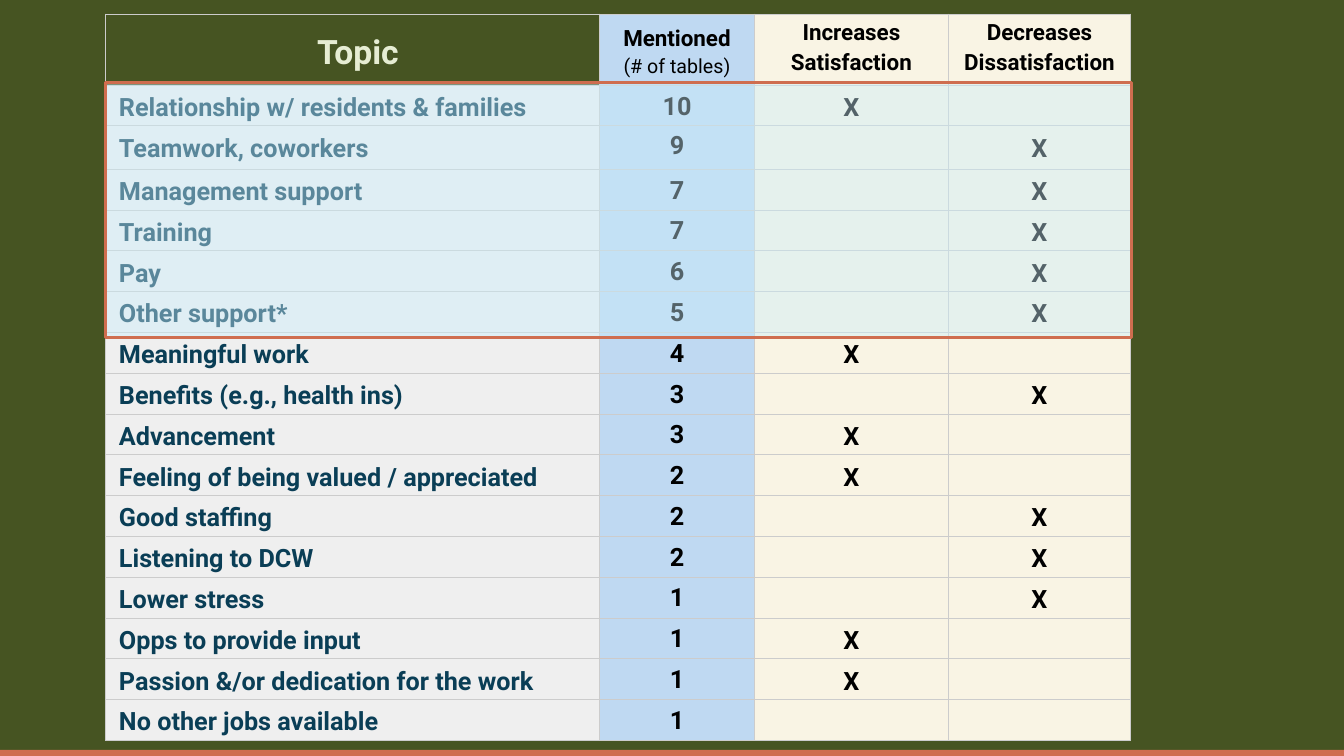
from lxml import etree
from pptx import Presentation
from pptx.dml.color import RGBColor
from pptx.enum.shapes import MSO_SHAPE
from pptx.enum.text import MSO_ANCHOR, PP_ALIGN
from pptx.oxml.ns import qn
from pptx.util import Inches, Pt

RECTANGLE = MSO_SHAPE.RECTANGLE
TOP, MIDDLE = MSO_ANCHOR.TOP, MSO_ANCHOR.MIDDLE
LEFT, CENTER = PP_ALIGN.LEFT, PP_ALIGN.CENTER

COLORS = {
    "background": "465422",
    "accent": "CF6D4F",
    "heading": "E6EDD3",
    "topic_text": "0A3E56",
    "black": "000000",
    "topic_fill": "EFEFEF",
    "count_fill": "BFD9F2",
    "effect_fill": "F9F4E4",
    "highlight": "CAEEFB",
    "border": "CCCCCC",
}

TABLE_LEFT, TABLE_TOP, TABLE_WIDTH, TABLE_HEIGHT = 1.05, 0.14, 10.17, 7.21
COLUMN_WIDTHS = [4.9, 1.53, 1.93, 1.8]
FIRST_HEIGHTS = [0.71, 0.39, 0.44]

HEADERS = [
    ([("Topic", 24, True)], "heading", None, MIDDLE),
    ([("Mentioned", 16, True), ("(# of tables)", 14, False)], "black", "count_fill", MIDDLE),
    ([("Increases Satisfaction", 16, True)], "black", "effect_fill", TOP),
    ([("Decreases Dissatisfaction", 16, True)], "black", "effect_fill", TOP),
]

TOPICS = [
    ("Relationship w/ residents & families", 10, "X", ""),
    ("Teamwork, coworkers", 9, "", "X"),
    ("Management support", 7, "", "X"),
    ("Training", 7, "", "X"),
    ("Pay", 6, "", "X"),
    ("Other support*", 5, "", "X"),
    ("Meaningful work", 4, "X", ""),
    ("Benefits (e.g., health ins)", 3, "", "X"),
    ("Advancement", 3, "X", ""),
    ("Feeling of being valued / appreciated", 2, "X", ""),
    ("Good staffing", 2, "", "X"),
    ("Listening to DCW", 2, "", "X"),
    ("Lower stress", 1, "", "X"),
    ("Opps to provide input", 1, "X", ""),
    ("Passion &/or dedication for the work", 1, "X", ""),
    ("No other jobs available", 1, "", ""),
]

TOPIC_COLUMNS = [
    ("topic_text", "topic_fill", MIDDLE, LEFT),
    ("black", "count_fill", TOP, CENTER),
    ("black", "effect_fill", MIDDLE, CENTER),
    ("black", "effect_fill", MIDDLE, CENTER),
]


def rgb(name):
    return RGBColor.from_string(COLORS[name])


def apply_format(target, values):
    for name, value in values.items():
        setattr(target, name, value)


class SlideBuilder:
    font = "Roboto"
    line_spacing = 1.15

    def __init__(self, page):
        self.page = page

    def background(self, color):
        fill = self.page.background.fill
        fill.solid()
        fill.fore_color.rgb = rgb(color)

    def rectangle(self, left, top, width, height, fill, line=None, line_width=0, opacity=100):
        box = self.page.shapes.add_shape(
            RECTANGLE, Inches(left), Inches(top), Inches(width), Inches(height))
        box.shadow.inherit = False
        box.fill.solid()
        box.fill.fore_color.rgb = rgb(fill)
        if opacity < 100:
            color = box.fill._xPr.find(qn("a:solidFill"))[0]
            etree.SubElement(color, qn("a:alpha"), val=str(opacity * 1000))
        if line:
            box.line.color.rgb = rgb(line)
            box.line.width = Pt(line_width)
        else:
            box.line.fill.background()

    def table(self, left, top, column_widths, row_heights):
        frame = self.page.shapes.add_table(
            len(row_heights), len(column_widths), Inches(left), Inches(top),
            Inches(sum(column_widths)), Inches(sum(row_heights)))
        table = frame.table
        apply_format(table, {"first_row": False, "horz_banding": False})
        for column, width in zip(table.columns, column_widths):
            column.width = Inches(width)
        for row, height in zip(table.rows, row_heights):
            row.height = Inches(height)
        return table

    def cell_borders(self, cell):
        properties = cell._tc.get_or_add_tcPr()
        for side in ("a:lnL", "a:lnR", "a:lnT", "a:lnB"):
            line = etree.SubElement(properties, qn(side), w=str(Pt(0.75)))
            fill = etree.SubElement(line, qn("a:solidFill"))
            etree.SubElement(fill, qn("a:srgbClr"), val=COLORS["border"])

    def cell(self, cell, lines, color, fill, anchor, align=CENTER):
        self.cell_borders(cell)
        if fill:
            cell.fill.solid()
            cell.fill.fore_color.rgb = rgb(fill)
        else:
            cell.fill.background()
        apply_format(cell, {
            "margin_left": Inches(0.13 if color in ("heading", "topic_text") else 0.03),
            "margin_right": Inches(0.03),
            "margin_top": Inches(0.02),
            "margin_bottom": Inches(0.02),
            "vertical_anchor": anchor,
        })
        frame = cell.text_frame
        for index, (text, size, bold) in enumerate(lines):
            para = frame.add_paragraph() if index else frame.paragraphs[0]
            apply_format(para, {"alignment": align, "line_spacing": self.line_spacing})
            span = para.add_run()
            span.text = text
            apply_format(span.font, {"name": self.font, "size": Pt(size), "bold": bold})
            span.font.color.rgb = rgb(color)


def main():
    deck = Presentation()
    apply_format(deck, {"slide_width": Inches(13.33), "slide_height": Inches(7.5)})
    builder = SlideBuilder(deck.slides.add_slide(deck.slide_layouts[6]))
    builder.background("background")
    builder.rectangle(0, 7.44, 13.33, 0.3, "accent")

    remaining = len(TOPICS) + 1 - len(FIRST_HEIGHTS)
    even_height = (TABLE_HEIGHT - sum(FIRST_HEIGHTS)) / remaining
    row_heights = FIRST_HEIGHTS + [even_height] * remaining
    table = builder.table(TABLE_LEFT, TABLE_TOP, COLUMN_WIDTHS, row_heights)
    for column, header in enumerate(HEADERS):
        builder.cell(table.cell(0, column), *header)
    for row, topic in enumerate(TOPICS, 1):
        for column, (value, style) in enumerate(zip(topic, TOPIC_COLUMNS)):
            lines = [(str(value), 18, True)] if value else []
            builder.cell(table.cell(row, column), lines, *style)

    builder.rectangle(TABLE_LEFT, 0.82, TABLE_WIDTH, 2.53, "highlight", "accent", 2.25, 42)
    deck.save("out.pptx")


if __name__ == "__main__":
    main()
